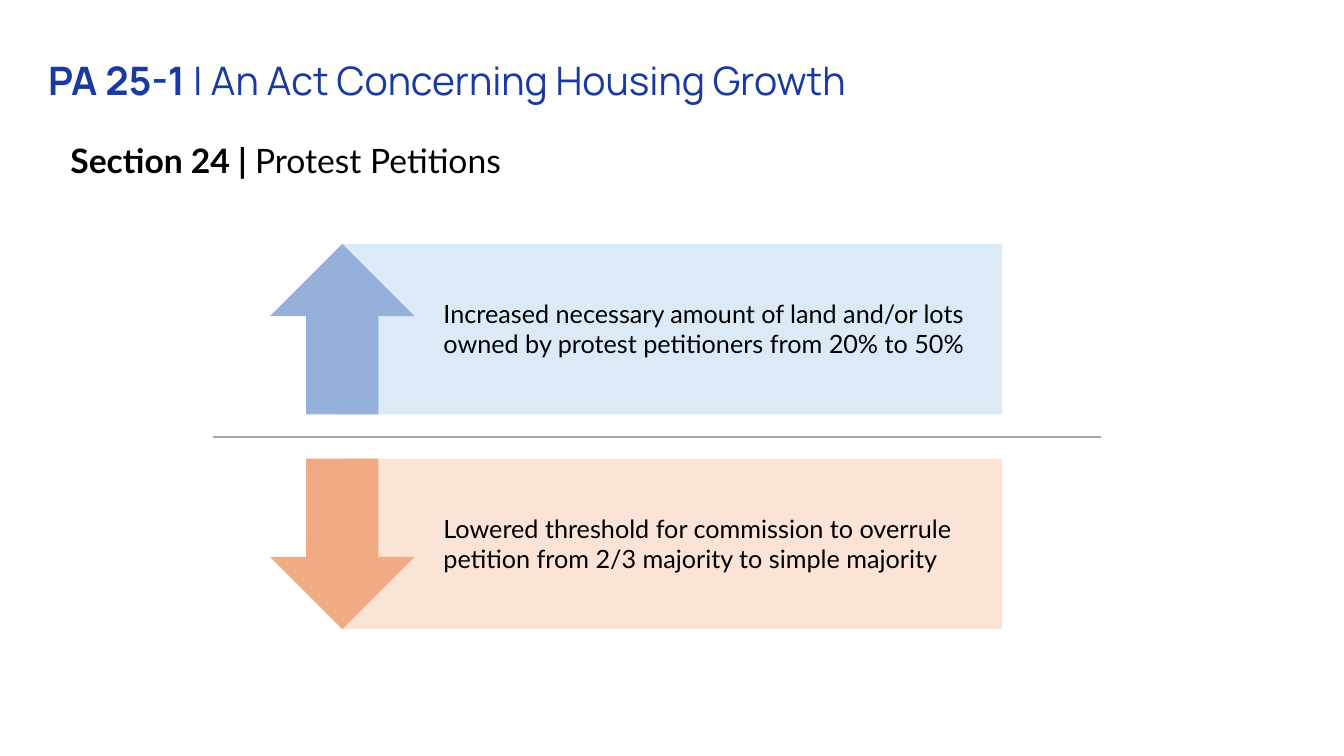
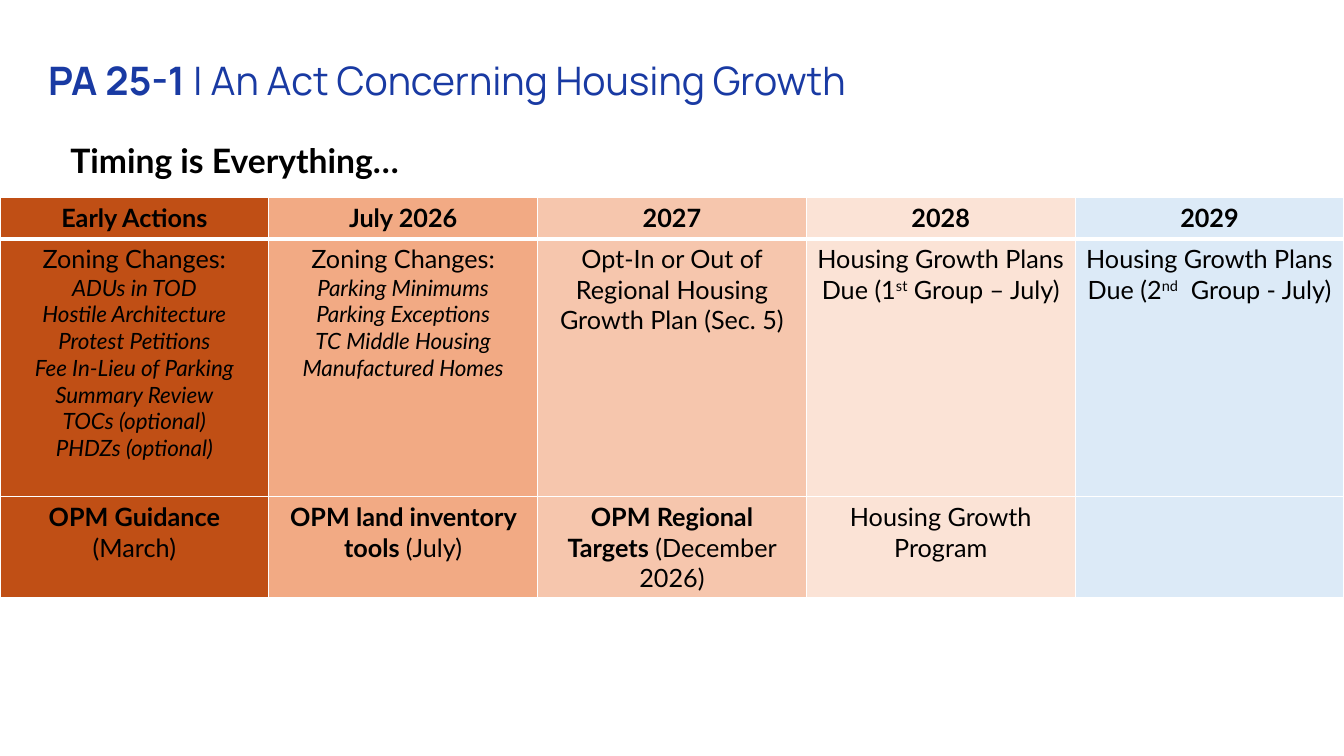
from lxml import etree
from pptx import Presentation
from pptx.dml.color import RGBColor
from pptx.enum.shapes import MSO_CONNECTOR, MSO_SHAPE
from pptx.enum.text import MSO_ANCHOR, PP_ALIGN
from pptx.oxml.ns import qn
from pptx.util import Pt

PX = 9144
PAGE_WIDTH, PAGE_HEIGHT = 1333, 750

RECTANGLE = MSO_SHAPE.RECTANGLE
UP_ARROW, DOWN_ARROW = MSO_SHAPE.UP_ARROW, MSO_SHAPE.DOWN_ARROW
STRAIGHT = MSO_CONNECTOR.STRAIGHT
TOP, MIDDLE = MSO_ANCHOR.TOP, MSO_ANCHOR.MIDDLE
LEFT, CENTER = PP_ALIGN.LEFT, PP_ALIGN.CENTER

TITLE_BLUE = RGBColor(0x19, 0x3A, 0xA3)
BLACK = RGBColor(0x00, 0x00, 0x00)
GRAY = RGBColor(0xA6, 0xA6, 0xA6)
RUST = RGBColor(0xC0, 0x4F, 0x15)
ORANGE = RGBColor(0xF2, 0xAA, 0x84)
PEACH = RGBColor(0xF6, 0xC6, 0xAD)
PALE_ORANGE = RGBColor(0xFB, 0xE3, 0xD6)
BLUE = RGBColor(0x96, 0xB0, 0xDC)
PALE_BLUE = RGBColor(0xDC, 0xEA, 0xF7)

TITLE_FONT, BODY_FONT = "Manrope", "Lato"
TITLE_SIZE, HEADING_SIZE, BODY_SIZE, LIST_SIZE = 28, 24, 18, 16
BOLD, ITALIC, RAISED = "bold", "italic", "raised"

COLUMN_FILLS = [RUST, ORANGE, PEACH, PALE_ORANGE, PALE_BLUE]
ROW_HEIGHTS = [41, 256, 100]
HEADERS = ["Early Actions", "July 2026", "2027", "2028", "2029"]
EARLY_CHANGES = ["ADUs in TOD", "Hostile Architecture", "Protest Petitions",
                 "Fee In-Lieu of Parking", "Summary Review",
                 "TOCs (optional)", "PHDZs (optional)"]
JULY_CHANGES = ["Parking Minimums", "Parking Exceptions",
                "TC Middle Housing", "Manufactured Homes"]


def px(*lengths):
    """Turn pixel lengths into EMU."""
    return [length * PX for length in lengths]


def write(frame, lines, size=BODY_SIZE, font=BODY_FONT, color=BLACK, align=LEFT):
    """Fill a text frame with lines, each a list of (text, style) spans."""
    for index, line in enumerate(lines):
        para = frame.paragraphs[0] if index == 0 else frame.add_paragraph()
        para.alignment = align
        for text, style in line:
            span = para.add_run()
            span.text = text
            span.font.name = font
            span.font.size = Pt(LIST_SIZE if style == ITALIC else size)
            span.font.color.rgb = color
            span.font.bold = style == BOLD
            span.font.italic = style == ITALIC
            if style == RAISED:
                span._r.get_or_add_rPr().set("baseline", "30000")


def add_text(page, area, line, anchor=TOP, **style):
    """Add a wrapping text box with one paragraph."""
    box = page.shapes.add_textbox(*px(*area))
    box.text_frame.word_wrap = True
    box.text_frame.vertical_anchor = anchor
    write(box.text_frame, [line], **style)
    return box


def add_block(page, kind, area, color):
    """Add a plain filled shape."""
    block = page.shapes.add_shape(kind, *px(*area))
    block.shadow.inherit = False
    block.fill.solid()
    block.fill.fore_color.rgb = color
    block.line.fill.background()


def add_page(deck, heading):
    """Add a page with the shared title and its own heading."""
    page = deck.slides.add_slide(deck.slide_layouts[6])
    title = [("PA 25-1 ", BOLD), ("| An Act Concerning Housing Growth", None)]
    box = add_text(page, (38, 40, 1204, 85), title, MIDDLE,
                   size=TITLE_SIZE, font=TITLE_FONT, color=TITLE_BLUE)
    box.text_frame.paragraphs[0].line_spacing = 0.9
    add_text(page, (60, 134, 1204, 50), heading, size=HEADING_SIZE)
    return page


def add_change(page, area, arrow, arrow_color, panel_color, text):
    """Add a panel with an arrow on its left and a statement."""
    left, top, width, height = area
    arrow_width, text_left, text_height = 143, 162, 71
    half_arrow = arrow_width // 2
    add_block(page, RECTANGLE,
              (left + half_arrow, top, width - half_arrow, height), panel_color)
    add_block(page, arrow, (left, top, arrow_width, height), arrow_color)
    text_top = top + (height - text_height) // 2
    add_text(page, (left + text_left, text_top, 545, text_height), [(text, None)])


def add_divider(page, left, right, y):
    """Add a horizontal gray rule."""
    rule = page.shapes.add_connector(STRAIGHT, *px(left, y, right, y))
    rule.line.color.rgb = GRAY
    rule.line.width = Pt(1.5)
    etree.SubElement(rule._element.spPr, qn("a:effectLst"))


def set_borders(cell, bottom_width):
    """Draw white borders around a cell."""
    properties = cell._tc.get_or_add_tcPr()
    widths = {"L": 1, "R": 1, "T": 1, "B": bottom_width}
    for index, (side, width) in enumerate(widths.items()):
        border = etree.Element(qn("a:ln" + side), w=str(Pt(width)))
        fill = etree.SubElement(border, qn("a:solidFill"))
        etree.SubElement(fill, qn("a:srgbClr"), val="FFFFFF")
        properties.insert(index, border)


def zoning_lines(changes):
    """List zoning changes in italics below their label."""
    return [[("Zoning Changes:", None)]] + [[(change, ITALIC)] for change in changes]


def due_line(number, suffix, group):
    """Give the due date of a group with a raised ordinal suffix."""
    return [[(f"Housing Growth Plans Due ({number}", None), (suffix, RAISED), (group, None)]]


def timeline_rows():
    """Return the rows of the timeline as cells of lines."""
    return [
        [[[(header, BOLD)]] for header in HEADERS],
        [
            zoning_lines(EARLY_CHANGES),
            zoning_lines(JULY_CHANGES),
            [[("Opt-In or Out of Regional Housing Growth Plan (Sec. 5)", None)]],
            due_line(1, "st", " Group – July)"),
            due_line(2, "nd", "  Group - July)"),
        ],
        [
            [[("OPM Guidance", BOLD)], [("(March)", None)]],
            [[("OPM land inventory tools ", BOLD), ("(July)", None)]],
            [[("OPM Regional Targets", BOLD), (" (December 2026)", None)]],
            [[("Housing Growth Program", None)]],
            [],
        ],
    ]


def add_timeline(page, left, top, width):
    """Add the timeline table with one color per column."""
    rows = timeline_rows()
    area = px(left, top, width, sum(ROW_HEIGHTS))
    table = page.shapes.add_table(len(rows), len(HEADERS), *area).table
    table.horz_banding = False
    for column in table.columns:
        column.width = width * PX // len(HEADERS)
    for row_index, row in enumerate(rows):
        table.rows[row_index].height = ROW_HEIGHTS[row_index] * PX
        for column_index, lines in enumerate(row):
            cell = table.cell(row_index, column_index)
            cell.fill.solid()
            cell.fill.fore_color.rgb = COLUMN_FILLS[column_index]
            set_borders(cell, 3 if row_index == 0 else 1)
            write(cell.text_frame, lines, align=CENTER)


def build_petitions(deck):
    """Build the page on protest petitions."""
    page = add_page(deck, [("Section 24 | ", BOLD), ("Protest Petitions", None)])
    add_change(page, (268, 242, 726, 169), UP_ARROW, BLUE, PALE_BLUE,
               "Increased necessary amount of land and/or lots owned by "
               "protest petitioners from 20% to 50%")
    add_divider(page, 211, 1092, 434)
    add_change(page, (268, 455, 726, 169), DOWN_ARROW, ORANGE, PALE_ORANGE,
               "Lowered threshold for commission to overrule petition "
               "from 2/3 majority to simple majority")


def build_timing(deck):
    """Build the page on timing."""
    page = add_page(deck, [("Timing is Everything…", BOLD)])
    add_timeline(page, 0, 196, PAGE_WIDTH)


def main():
    """Build and save the deck."""
    deck = Presentation()
    deck.slide_width, deck.slide_height = px(PAGE_WIDTH, PAGE_HEIGHT)
    build_petitions(deck)
    build_timing(deck)
    deck.save("out.pptx")


if __name__ == "__main__":
    main()
